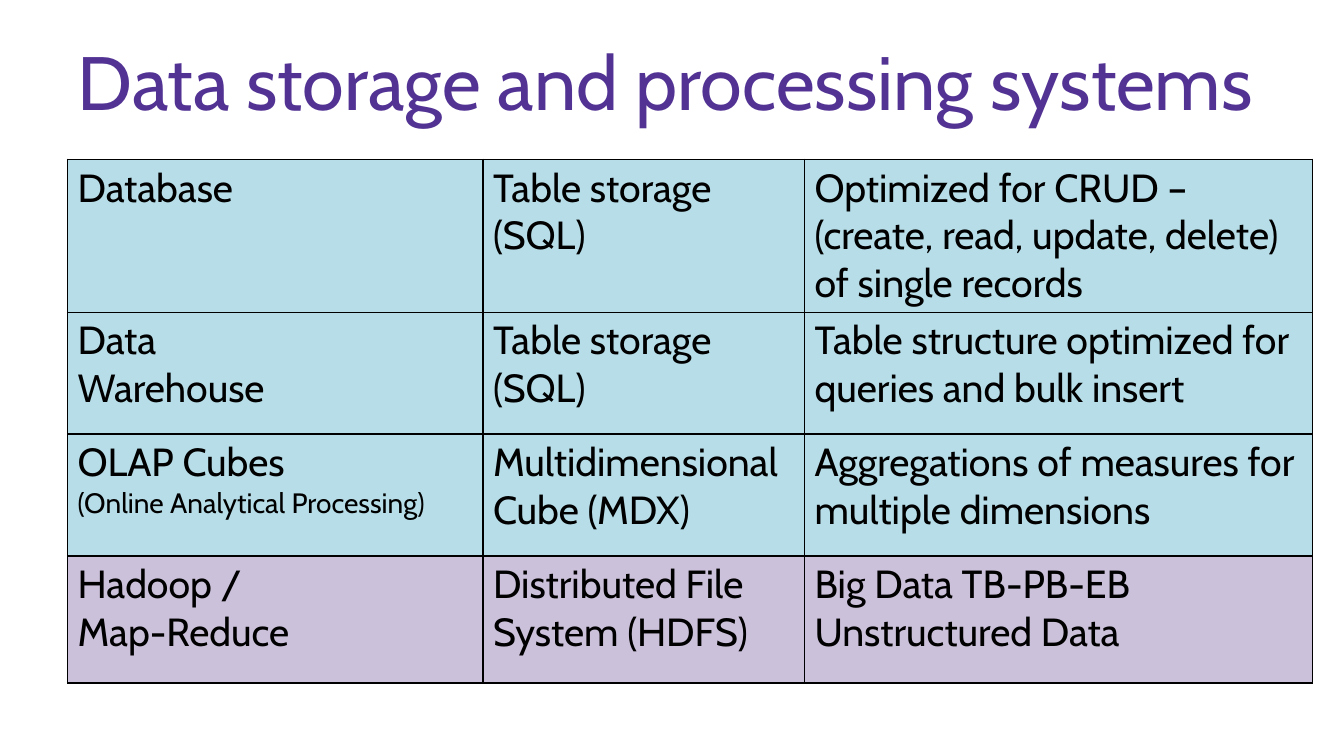
"""Build a slide comparing data storage and processing systems."""
from lxml import etree
from pptx import Presentation
from pptx.dml.color import RGBColor
from pptx.enum import text
from pptx.oxml import ns
from pptx.util import Inches, Pt

HEADING = "Data storage and processing systems"
RELATIONAL, BIG_DATA = "B7DEE8", "CCC1DA"
SYSTEMS = [
    (RELATIONAL, 1.49, ["Database"], ["Table storage (SQL)"],
     ["Optimized for CRUD – (create, read, update, delete) of single records"]),
    (RELATIONAL, 1.21, ["Data", "Warehouse"], ["Table storage (SQL)"],
     ["Table structure optimized for queries and bulk insert"]),
    (RELATIONAL, 1.21, ["OLAP Cubes", "(Online Analytical Processing)"],
     ["Multidimensional Cube (MDX)"],
     ["Aggregations of measures for multiple dimensions"]),
    (BIG_DATA, 1.26, ["Hadoop /", "Map-Reduce"],
     ["Distributed File System (HDFS)"],
     ["Big Data TB-PB-EB", "Unstructured Data"]),
]
COLUMN_WIDTHS = [4.12, 3.19, 5.04]
LEFT, TABLE_TOP = 0.67, 1.58
INK, PURPLE = "000000", "523394"


def color(value):
    return RGBColor.from_string(value)


def format_font(font, size, ink):
    for key, value in {"name": "Cabin", "size": Pt(size), "bold": False}.items():
        setattr(font, key, value)
    font.color.rgb = color(ink)


def add_borders(cell):
    properties = cell._tc.get_or_add_tcPr()
    for edge in ("lnL", "lnR", "lnT", "lnB"):
        border = etree.SubElement(properties, ns.qn(f"a:{edge}"), w=str(Pt(1)))
        paint = etree.SubElement(border, ns.qn("a:solidFill"))
        etree.SubElement(paint, ns.qn("a:srgbClr"), val=INK)


def fill_cell(cell, lines, background):
    add_borders(cell)
    cell.fill.solid()
    cell.fill.fore_color.rgb = color(background)
    cell.text_frame.text = "\n".join(lines)
    for paragraph in cell.text_frame.paragraphs:
        for run in paragraph.runs:
            format_font(run.font, 20 if run.text.startswith("(") else 28, INK)


def add_heading(slide):
    heading = slide.shapes.title
    bounds = {"left": LEFT, "top": 0.17, "width": 12.67, "height": 1.25}
    for side, length in bounds.items():
        setattr(heading, side, Inches(length))
    frame = heading.text_frame
    frame.text = HEADING
    layout = {"word_wrap": True, "auto_size": text.MSO_AUTO_SIZE.NONE,
              "vertical_anchor": text.MSO_ANCHOR.MIDDLE}
    for key, value in layout.items():
        setattr(frame, key, value)
    frame.paragraphs[0].alignment = text.PP_ALIGN.LEFT
    format_font(frame.paragraphs[0].runs[0].font, 54, PURPLE)


def add_systems(slide):
    total_height = sum(height for _, height, *_ in SYSTEMS)
    systems = slide.shapes.add_table(
        len(SYSTEMS), len(COLUMN_WIDTHS), Inches(LEFT), Inches(TABLE_TOP),
        Inches(sum(COLUMN_WIDTHS)), Inches(total_height)).table
    systems.first_row = systems.horz_banding = False
    for column, width in zip(systems.columns, COLUMN_WIDTHS):
        column.width = Inches(width)
    for row, (background, height, *entries) in zip(systems.rows, SYSTEMS):
        row.height = Inches(height)
        for cell, lines in zip(row.cells, entries):
            fill_cell(cell, lines, background)


def main():
    deck = Presentation()
    deck.slide_width, deck.slide_height = Inches(13.33), Inches(7.5)
    slide = deck.slides.add_slide(deck.slide_layouts[5])
    add_heading(slide)
    add_systems(slide)
    deck.save("out.pptx")


if __name__ == "__main__":
    main()
